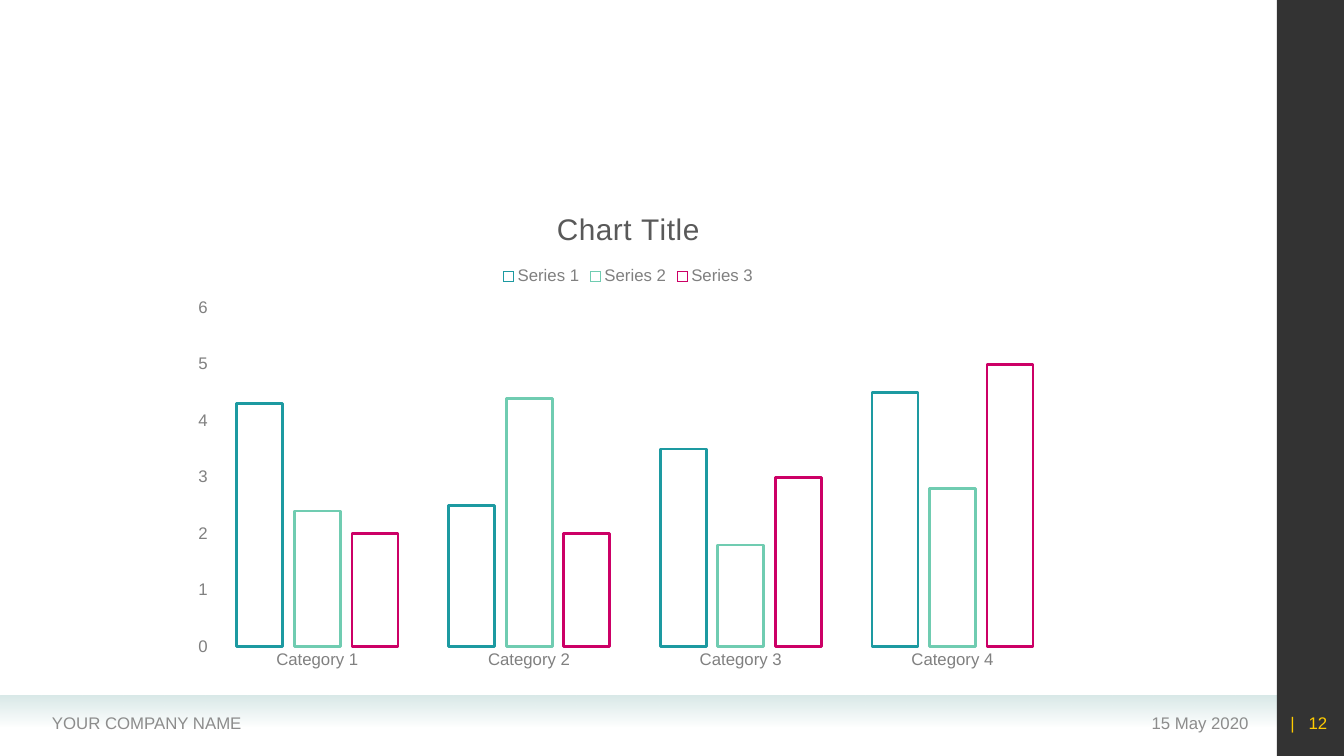
from dataclasses import dataclass

from lxml import etree
from pptx import Presentation
from pptx.chart.data import CategoryChartData
from pptx.dml.color import RGBColor
from pptx.enum.chart import XL_CHART_TYPE, XL_LEGEND_POSITION, XL_TICK_MARK
from pptx.enum.shapes import MSO_SHAPE
from pptx.enum.text import MSO_ANCHOR, PP_ALIGN
from pptx.oxml.ns import qn
from pptx.util import Pt

COLUMNS = XL_CHART_TYPE.COLUMN_CLUSTERED
LEGEND_TOP = XL_LEGEND_POSITION.TOP
NO_TICK = XL_TICK_MARK.NONE
RECTANGLE = MSO_SHAPE.RECTANGLE
MIDDLE = MSO_ANCHOR.MIDDLE
LEFT, RIGHT = PP_ALIGN.LEFT, PP_ALIGN.RIGHT


@dataclass(frozen=True)
class Theme:
    font: str = "Arial"
    body_size: float = 12
    title_size: float = 21.3
    title: str = "595959"
    label: str = "808080"
    footer: str = "8C8C8C"
    page_number: str = "FFCC00"
    footer_band: str = "D9E9E8"
    side_bar: str = "000000"
    series: tuple = ("1D9AA1", "70CCB1", "CC0066")


THEME = Theme()
SLIDE_WIDTH, SLIDE_HEIGHT = 960, 540
SIDE_BAR_WIDTH = 48
MAIN_WIDTH = SLIDE_WIDTH - SIDE_BAR_WIDTH

CATEGORIES = [f"Category {number}" for number in range(1, 5)]
SERIES = {
    "Series 1": (4.3, 2.5, 3.5, 4.5),
    "Series 2": (2.4, 4.4, 1.8, 2.8),
    "Series 3": (2, 2, 3, 5),
}


def set_all(target, values):
    for name, value in values.items():
        setattr(target, name, value)


def style_font(font, color, size=THEME.body_size):
    set_all(font, {"name": THEME.font, "size": Pt(size), "bold": False})
    font.color.rgb = RGBColor.from_string(color)


def set_opacity(color_element, percent):
    alpha = etree.SubElement(color_element, qn("a:alpha"))
    alpha.set("val", str(percent * 1000))


def add_panel(slide, box):
    panel = slide.shapes.add_shape(RECTANGLE, *map(Pt, box))
    panel.shadow.inherit = False
    panel.line.fill.background()
    return panel


def add_label(slide, box, text, color, align):
    frame = slide.shapes.add_textbox(*map(Pt, box)).text_frame
    set_all(frame, {"word_wrap": True, "vertical_anchor": MIDDLE})
    paragraph = frame.paragraphs[0]
    paragraph.alignment = align
    run = paragraph.add_run()
    run.text = text
    style_font(run.font, color)


def add_footer(slide, box):
    left, top, width, height = box

    # Band fading out downwards
    band = add_panel(slide, (left, top, width, 22.5))
    band.fill.gradient()
    band.fill.gradient_angle = 270
    for stop, position in zip(band.fill.gradient_stops, (0, 1)):
        stop.position = position
        stop.color.rgb = RGBColor.from_string(THEME.footer_band)
    colors = list(band.element.spPr.iter(qn("a:srgbClr")))
    set_opacity(colors[-1], 0)

    # Company at the left, date at the right
    text_top, text_height = top + 5.5, 28.8
    add_label(slide, (left + 30, text_top, 353, text_height),
              "YOUR COMPANY NAME", THEME.footer, LEFT)
    add_label(slide, (left + width - 257, text_top, 244, text_height),
              "15 May 2020", THEME.footer, RIGHT)


def add_side_bar(slide, box):
    left, top, width, height = box
    bar = add_panel(slide, box)
    bar.fill.solid()
    bar.fill.fore_color.rgb = RGBColor.from_string(THEME.side_bar)
    set_opacity(next(bar.element.spPr.iter(qn("a:srgbClr"))), 80)
    add_label(slide, (left - 4.8, top + height - 38, width, 28.8),
              "|   12", THEME.page_number, RIGHT)


def add_column_chart(slide, box):
    data = CategoryChartData()
    data.categories = CATEGORIES
    for name, values in SERIES.items():
        data.add_series(name, values)
    chart = slide.shapes.add_chart(COLUMNS, *map(Pt, box), data).chart
    style_font(chart.font, THEME.label)

    # Title
    chart.has_title = True
    chart.chart_title.include_in_layout = False
    title = chart.chart_title.text_frame.paragraphs[0].add_run()
    title.text = "Chart Title"
    style_font(title.font, THEME.title, THEME.title_size)
    title.font._element.set("spc", "50")

    # Legend
    chart.has_legend = True
    set_all(chart.legend, {"position": LEGEND_TOP, "include_in_layout": False})
    style_font(chart.legend.font, THEME.label)

    # Axes
    for axis in (chart.category_axis, chart.value_axis):
        set_all(axis, {"has_major_gridlines": False,
                       "major_tick_mark": NO_TICK,
                       "minor_tick_mark": NO_TICK})
        axis.format.line.fill.background()
        style_font(axis.tick_labels.font, THEME.label)
    set_all(chart.value_axis, {"minimum_scale": 0, "maximum_scale": 6,
                               "major_unit": 1})

    # Outlined columns
    plot = chart.plots[0]
    set_all(plot, {"gap_width": 110, "overlap": -25, "vary_by_categories": False})
    for series, color in zip(plot.series, THEME.series):
        series.format.fill.background()
        series.format.line.width = Pt(2)
        series.format.line.color.rgb = RGBColor.from_string(color)


def main():
    presentation = Presentation()
    set_all(presentation, {"slide_width": Pt(SLIDE_WIDTH),
                           "slide_height": Pt(SLIDE_HEIGHT)})
    slide = presentation.slides.add_slide(presentation.slide_layouts[6])
    add_footer(slide, (0, 496.5, MAIN_WIDTH, 43.5))
    add_side_bar(slide, (MAIN_WIDTH, 0, SIDE_BAR_WIDTH, SLIDE_HEIGHT))
    add_column_chart(slide, (128.8, 136, 640, 348.5))
    presentation.save("out.pptx")


if __name__ == "__main__":
    main()
